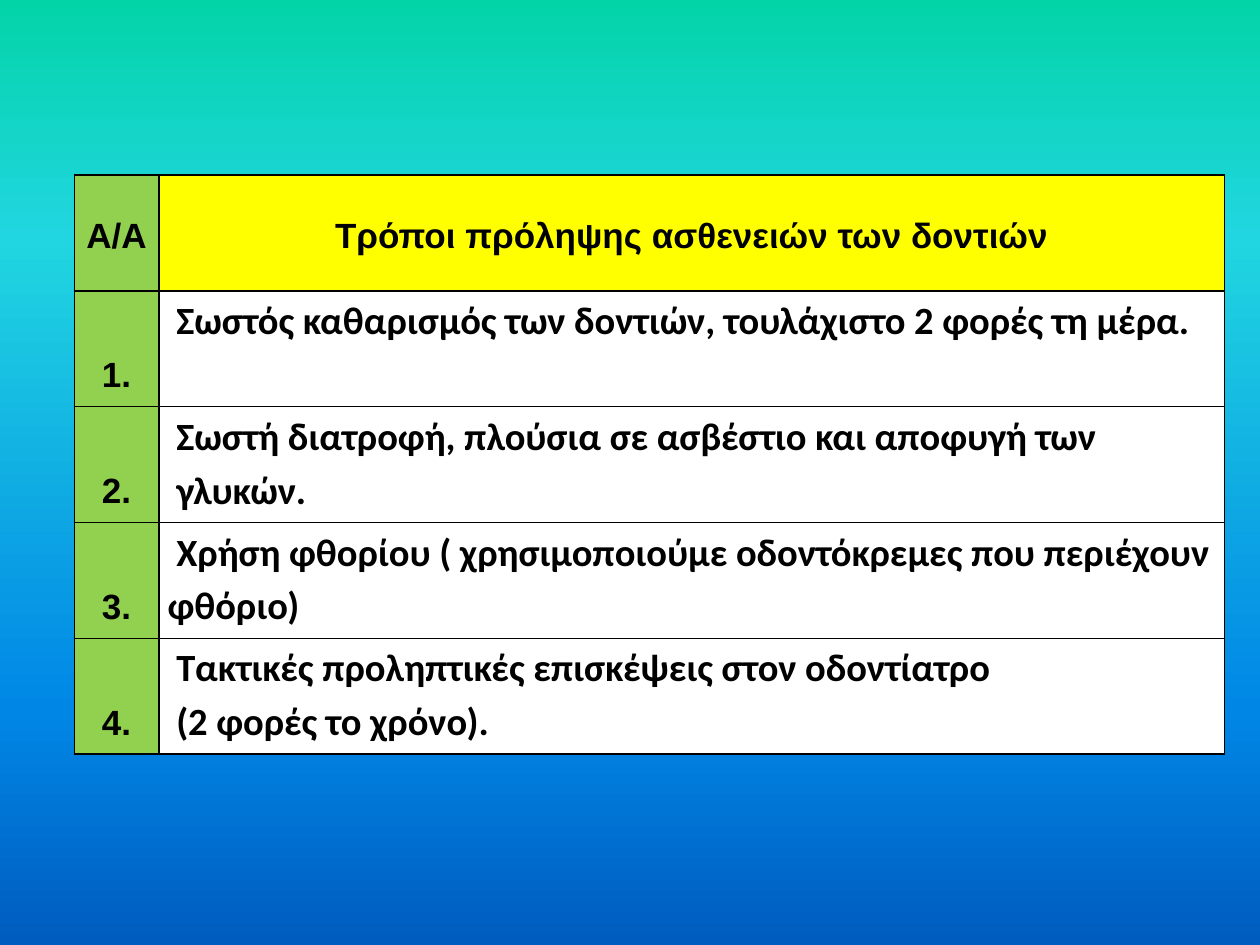
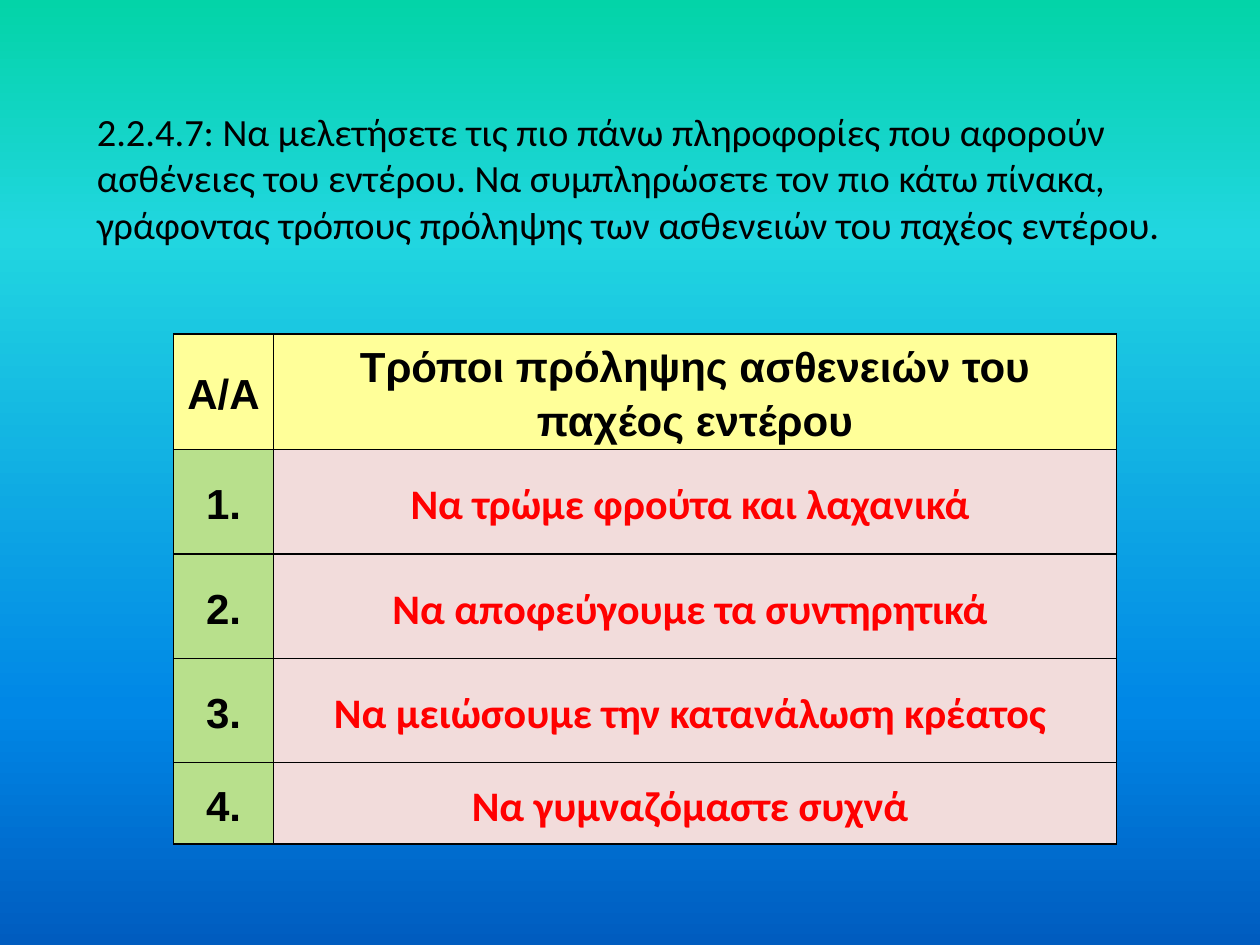
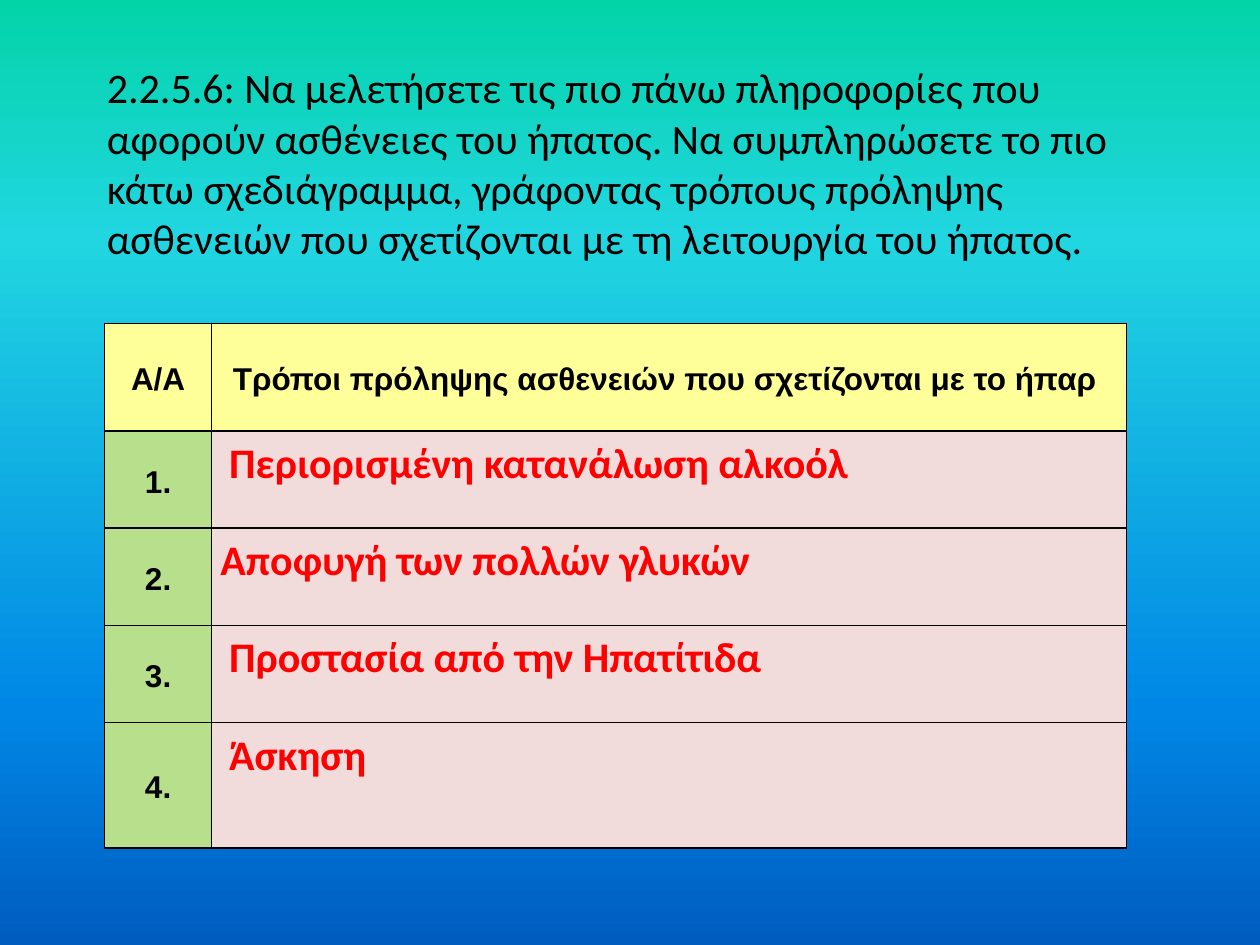
from lxml.etree import SubElement
from pptx import Presentation
from pptx.dml.color import RGBColor
from pptx.enum.text import MSO_ANCHOR, MSO_AUTO_SIZE, PP_ALIGN
from pptx.oxml.ns import qn
from pptx.util import Pt

COLORS = {
    "black": "000000", "white": "FFFFFF", "red": "FF0000",
    "green": "92D050", "yellow": "FFFF00",
    "pale_green": "B8E08C", "pale_yellow": "FFFF99", "pink": "F2DCDB",
}
BACKGROUND = [(0, "03D4A8"), (25, "21D6E0"), (75, "0087E6"), (100, "005CBF")]
CELL_MARGIN = 5
FIRST_INDENT = 5

# Fills and text colour of the two answer tables
ANSWER_STYLE = {
    "head_fills": ("pale_yellow", "pale_yellow"),
    "body_fills": ("pale_green", "pink"),
    "color": "red",
}


def rgb(name):
    return RGBColor.from_string(COLORS[name])


def set_background(master):
    """Give every slide the vertical gradient."""
    fill = master.background.fill
    fill.gradient()
    fill.gradient_angle = 270
    stops = master.element.find(".//" + qn("a:gsLst"))
    for stop in list(stops):
        stops.remove(stop)
    for percent, color in BACKGROUND:
        stop = SubElement(stops, qn("a:gs"), pos=str(percent * 1000))
        SubElement(stop, qn("a:srgbClr"), val=color)


def style_paragraph(p, size, font="Calibri", color="black", bold=False):
    p.font.size = Pt(size)
    p.font.name = font
    p.font.bold = bold
    p.font.color.rgb = rgb(color)


def add_task(slide, left, top, width, height, text, size):
    """Add the exercise text above a table."""
    tf = slide.shapes.add_textbox(Pt(left), Pt(top), Pt(width), Pt(height)).text_frame
    tf.word_wrap = True
    tf.auto_size = MSO_AUTO_SIZE.SHAPE_TO_FIT_TEXT
    p = tf.paragraphs[0]
    p.text = text
    style_paragraph(p, size)


def add_borders(cell):
    tc_pr = cell._tc.get_or_add_tcPr()
    for i, side in enumerate(("a:lnL", "a:lnR", "a:lnT", "a:lnB")):
        ln = tc_pr.makeelement(qn(side), {"w": str(Pt(1))})
        fill = SubElement(ln, qn("a:solidFill"))
        SubElement(fill, qn("a:srgbClr"), val=COLORS["black"])
        tc_pr.insert(i, ln)


def fill_cell(cell, text, fill, size, font="Arial", color="black", centered=True,
              anchor=MSO_ANCHOR.MIDDLE, indent=0, right=CELL_MARGIN, bottom=0):
    """Write a bold cell; each line of text becomes a paragraph."""
    cell.fill.solid()
    cell.fill.fore_color.rgb = rgb(fill)
    add_borders(cell)
    cell.vertical_anchor = anchor
    cell.margin_left, cell.margin_right = Pt(CELL_MARGIN), Pt(right)
    cell.margin_top, cell.margin_bottom = 0, Pt(bottom)
    cell.text = text
    for p in cell.text_frame.paragraphs:
        p.alignment = PP_ALIGN.CENTER if centered else PP_ALIGN.LEFT
        p.line_spacing = 1.15
        if indent:
            p._p.get_or_add_pPr().set("indent", str(Pt(indent)))
        style_paragraph(p, size, font, color, bold=True)


def add_prevention_table(slide, left, top, widths, heights, heading, answers,
                         head_fills, body_fills, color, size, answer_size,
                         number_format, answer_format, heading_right=CELL_MARGIN):
    """Add a numbered table of ways to prevent illness."""
    table = slide.shapes.add_table(
        len(heights), len(widths), Pt(left), Pt(top),
        Pt(sum(widths)), Pt(sum(heights))).table
    table.first_row = table.horz_banding = False
    for column, width in zip(table.columns, widths):
        column.width = Pt(width)
    for row, height in zip(table.rows, heights):
        row.height = Pt(height)

    # Header row
    fill_cell(table.cell(0, 0), "Α/Α", head_fills[0], size)
    fill_cell(table.cell(0, 1), heading, head_fills[1], size, right=heading_right)

    # Numbered rows
    for i, (text, indent) in enumerate(answers, 1):
        fill_cell(table.cell(i, 0), f"{i}.", body_fills[0], size, **number_format)
        fill_cell(table.cell(i, 1), text, body_fills[1], answer_size, "Calibri",
                  color, indent=indent, **answer_format)


def main():
    prs = Presentation()
    prs.slide_width, prs.slide_height = Pt(720), Pt(540)
    set_background(prs.slide_master)
    teeth, bowel, liver = (prs.slides.add_slide(prs.slide_layouts[6]) for _ in range(3))
    top_left = {"centered": False, "anchor": MSO_ANCHOR.TOP}

    # Teeth
    add_prevention_table(
        teeth, 42.5, 100, [48.25, 609], [66.2] * 5,
        "Τρόποι πρόληψης ασθενειών των δοντιών",
        [("Σωστός καθαρισμός των δοντιών, τουλάχιστο 2 φορές τη μέρα.", FIRST_INDENT),
         ("Σωστή διατροφή, πλούσια σε ασβέστιο και αποφυγή των\nγλυκών.", FIRST_INDENT),
         ("Χρήση φθορίου ( χρησιμοποιούμε οδοντόκρεμες που περιέχουν φθόριο)",
          FIRST_INDENT),
         ("Τακτικές προληπτικές επισκέψεις στον οδοντίατρο\n(2 φορές το χρόνο).",
          FIRST_INDENT)],
        head_fills=("green", "yellow"), body_fills=("green", "white"), color="black",
        size=20, answer_size=22,
        number_format={"anchor": MSO_ANCHOR.BOTTOM, "bottom": 6.5},
        answer_format=top_left)

    # Large intestine
    add_task(
        bowel, 48.25, 58.25, 629.25, 87,
        "2.2.4.7: Να μελετήσετε τις πιο πάνω πληροφορίες που αφορούν ασθένειες του "
        "εντέρου. Να συμπληρώσετε τον πιο κάτω πίνακα, γράφοντας τρόπους πρόληψης "
        "των ασθενειών του παχέος εντέρου.", 22)
    add_prevention_table(
        bowel, 99.25, 190.75, [57, 481.75], [66.25, 59.6, 59.6, 59.6, 46.5],
        "Τρόποι πρόληψης ασθενειών του παχέος εντέρου",
        [("Να τρώμε φρούτα και λαχανικά", 0),
         ("Να αποφεύγουμε τα συντηρητικά", 0),
         ("Να μειώσουμε την κατανάλωση κρέατος", 0),
         ("Να γυμναζόμαστε συχνά", 0)],
        size=24, answer_size=24, number_format={}, answer_format={"right": 10.5},
        **ANSWER_STYLE)

    # Liver
    add_task(
        liver, 54, 31.75, 607, 124,
        "2.2.5.6: Να μελετήσετε τις πιο πάνω πληροφορίες που αφορούν ασθένειες του "
        "ήπατος. Να συμπληρώσετε το πιο κάτω σχεδιάγραμμα, γράφοντας τρόπους "
        "πρόληψης ασθενειών που σχετίζονται με τη λειτουργία του ήπατος.", 24)
    add_prevention_table(
        liver, 59.75, 185, [61.25, 522.75], [61.25, 55.6, 55.6, 55.6, 71.5],
        "Τρόποι πρόληψης ασθενειών που σχετίζονται με το ήπαρ",
        [("Περιορισμένη κατανάλωση αλκοόλ", FIRST_INDENT),
         ("Αποφυγή των πολλών γλυκών", 0),
         ("Προστασία από την Ηπατίτιδα", FIRST_INDENT),
         ("Άσκηση", FIRST_INDENT)],
        size=18, answer_size=24, number_format={}, answer_format=top_left,
        heading_right=10, **ANSWER_STYLE)

    prs.save("out.pptx")


if __name__ == "__main__":
    main()
